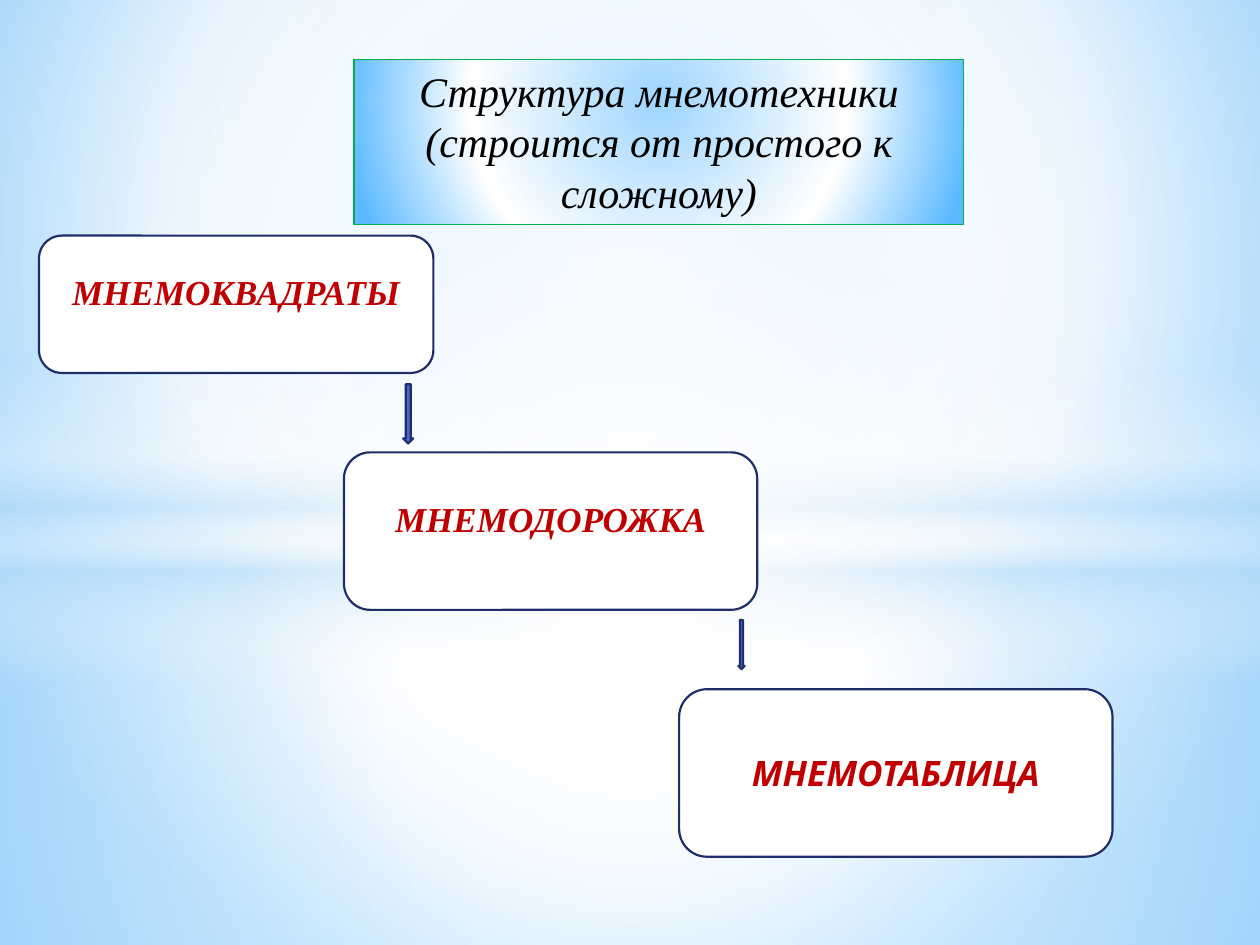
from lxml import etree
from pptx import Presentation
from pptx.dml.color import RGBColor
from pptx.enum.shapes import MSO_SHAPE as Preset
from pptx.enum.text import MSO_ANCHOR as Anchor, PP_ALIGN as Align
from pptx.oxml.ns import qn
from pptx.util import Inches, Pt

COLUMNS, ROWS = 100, 75
WIDTH, HEIGHT = Inches(10), Inches(7.5)
COLORS = {
    "white": "FFFFFF", "sky": "9ED5FF", "azure": "5BB9FF", "haze": "B4DCFA",
    "green": "00B050", "navy": "1F2E69", "blue": "4E67C8",
    "red": "C00000", "black": "000000",
}
SKY_STOPS = [(0, "sky", 100), (60, "white", 100), (100, "azure", 100)]
SKY_FOCUS = (20, 10, 20, 60)
CENTER = (50, 50, 50, 50)


def color(name):
    return RGBColor.from_string(COLORS[name])


def paint_gradient(fill, owner, stops, focus=None):
    fill.gradient()
    gradient = next(owner.iter(qn("a:gradFill")))
    for child in list(gradient):
        gradient.remove(child)
    stop_list = etree.SubElement(gradient, qn("a:gsLst"))
    for position, name, opacity in stops:
        stop = etree.SubElement(stop_list, qn("a:gs"), pos=str(position * 1000))
        tint = etree.SubElement(stop, qn("a:srgbClr"), val=COLORS[name])
        if opacity < 100:
            etree.SubElement(tint, qn("a:alpha"), val=str(opacity * 1000))
    if focus:
        circle = etree.SubElement(gradient, qn("a:path"), path="circle")
        sides = {side: str(share * 1000) for side, share in zip("ltrb", focus)}
        etree.SubElement(circle, qn("a:fillToRect"), **sides)
    else:
        etree.SubElement(gradient, qn("a:lin"), ang=str(90 * 60000), scaled="0")


def add_shape(slide, preset, box, line=None, weight=1.25):
    left, top, width, height = box
    column, row = WIDTH / COLUMNS, HEIGHT / ROWS
    shape = slide.shapes.add_shape(
        preset, round(left * column), round(top * row),
        round(width * column), round(height * row))
    shape.shadow.inherit = False
    if line:
        shape.line.color.rgb = color(line)
        shape.line.width = Pt(weight)
    else:
        shape.line.fill.background()
    return shape


def write(shape, text, size, ink, font="Times New Roman", bold=False):
    frame = shape.text_frame
    frame.text = text
    frame.word_wrap = True
    paragraph = frame.paragraphs[0]
    paragraph.alignment = Align.CENTER
    style = paragraph.runs[0].font
    style.name, style.size = font, Pt(size)
    style.bold, style.italic = bold, True
    style.color.rgb = color(ink)


def add_backdrop(slide):
    paint_gradient(slide.background.fill, slide.element, SKY_STOPS, SKY_FOCUS)
    layers = [
        (Preset.RECTANGLE, (0, 42.3, COLUMNS, 32.7), CENTER,
         [(0, "white", 91), (37, "white", 76), (100, "haze", 79)]),
        (Preset.RECTANGLE, (0, 0, COLUMNS, 42.3), CENTER,
         [(0, "white", 89), (48, "white", 62), (100, "haze", 79)]),
        (Preset.RECTANGLE, (0, 29, COLUMNS, 25), None,
         [(0, "white", 0), (29, "white", 30), (45, "haze", 40),
          (55, "white", 26), (65, "haze", 60), (100, "white", 0)]),
        (Preset.OVAL, (0, 17.5, COLUMNS, 55.8), CENTER,
         [(0, "white", 100), (54, "white", 0)]),
    ]
    for preset, box, focus, stops in layers:
        layer = add_shape(slide, preset, box)
        paint_gradient(layer.fill, layer.element, stops, focus)


def add_title(slide, box, text):
    title = add_shape(slide, Preset.RECTANGLE, box, "green", 0.75)
    paint_gradient(title.fill, title.element, SKY_STOPS, SKY_FOCUS)
    write(title, text, 24, "black")
    title.text_frame.vertical_anchor = Anchor.TOP


def add_step(slide, box, text, font, bottom_inset):
    step = add_shape(slide, Preset.ROUNDED_RECTANGLE, box, "navy")
    step.fill.solid()
    step.fill.fore_color.rgb = color("white")
    write(step, text, 20, "red", font, bold=True)
    step.text_frame.vertical_anchor = Anchor.MIDDLE
    step.text_frame.margin_bottom = Inches(bottom_inset)


def add_arrow(slide, box):
    arrow = add_shape(slide, Preset.DOWN_ARROW, box, "navy")
    arrow.fill.solid()
    arrow.fill.fore_color.rgb = color("blue")


def main():
    presentation = Presentation()
    presentation.slide_width, presentation.slide_height = WIDTH, HEIGHT
    slide = presentation.slides.add_slide(presentation.slide_layouts[6])
    add_backdrop(slide)
    add_title(slide, (28.1, 4.7, 48.4, 13.1),
              "Структура мнемотехники (строится от простого к сложному)")
    steps = [
        ((3.1, 18.7, 31.3, 10.9), "МНЕМОКВАДРАТЫ", "Times New Roman", 0.25),
        ((27.3, 35.9, 32.8, 12.5), "МНЕМОДОРОЖКА", "Times New Roman", 0.25),
        ((53.9, 54.7, 34.4, 13.3), "МНЕМОТАБЛИЦА", "Karla", 0.05),
    ]
    for step in steps:
        add_step(slide, *step)
    for box in [(32, 30.5, 0.8, 4.7), (58.6, 49.2, 0.5, 3.9)]:
        add_arrow(slide, box)
    presentation.save("out.pptx")


if __name__ == "__main__":
    main()
